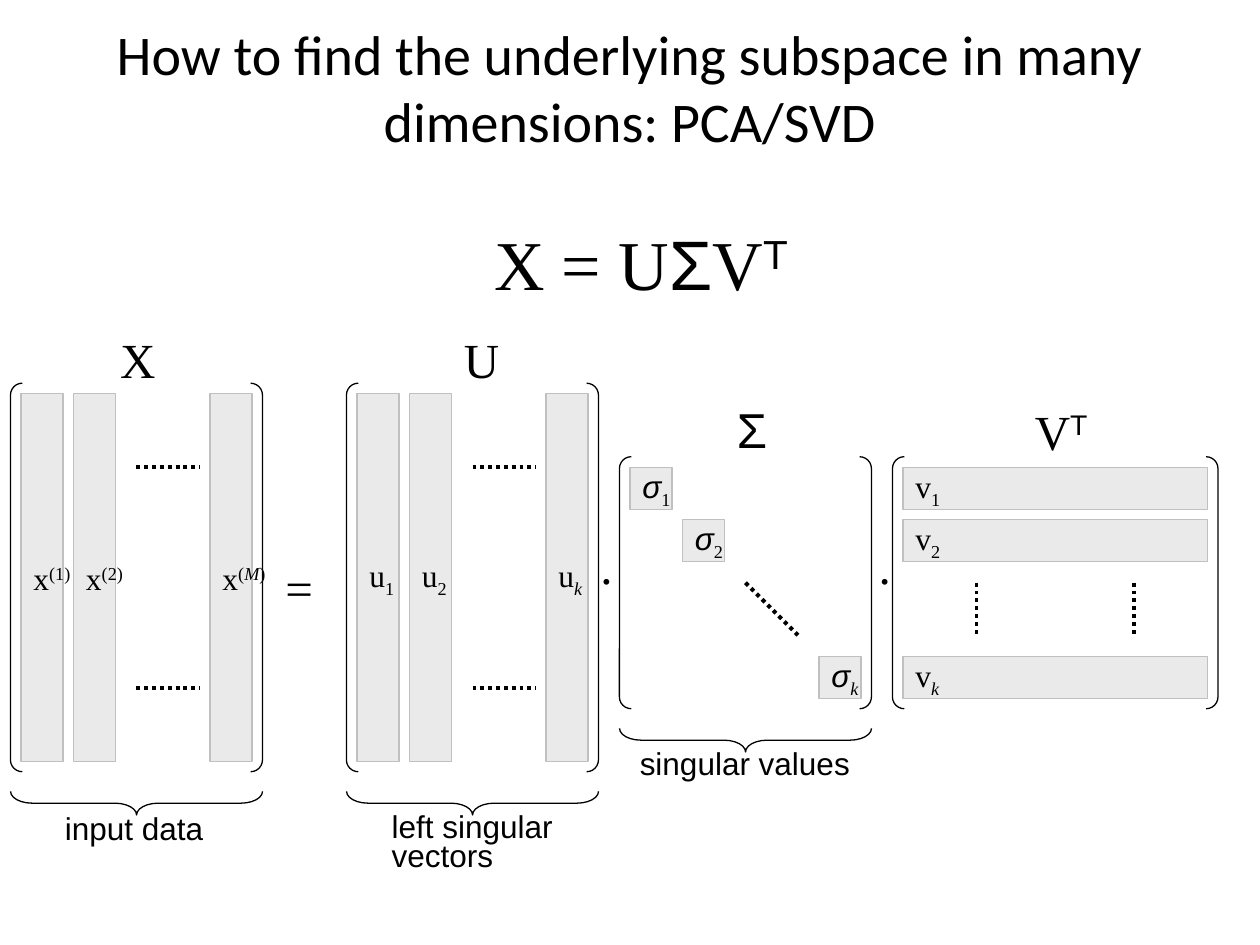
import pptx
import pptx.dml.color
import pptx.enum.dml
import pptx.enum.shapes
import pptx.enum.text
import pptx.oxml.ns
import pptx.util
from lxml import etree

PX = 9525  # EMU per px, 96 px to the inch
SHAPE = pptx.enum.shapes.MSO_SHAPE
ANCHOR = pptx.enum.text.MSO_ANCHOR
ALIGN = pptx.enum.text.PP_ALIGN
AUTO_SIZE = pptx.enum.text.MSO_AUTO_SIZE
SERIF, SANS = "Times New Roman", "Arial"
BLACK, FILL, EDGE = "000000", "EAEAEA", "C0C0C0"
SUB, SUPER = -25000, 30000


def write(shape, lines, size, frame_format, paragraph_format):
    """Fill a shape with lines of (text, font, baseline, italic) runs."""
    frame = shape.text_frame
    for name, value in frame_format.items():
        setattr(frame, name, value)
    for index, runs in enumerate(lines):
        paragraph = frame.add_paragraph() if index else frame.paragraphs[0]
        for name, value in paragraph_format.items():
            setattr(paragraph, name, value)
        for text, font, baseline, italic in runs:
            run = paragraph.add_run()
            run.text = text
            run_format = {"name": font, "size": pptx.util.Pt(size), "italic": italic}
            for name, value in run_format.items():
                setattr(run.font, name, value)
            run.font.color.rgb = pptx.dml.color.RGBColor.from_string(BLACK)
            if baseline:
                run._r.get_or_add_rPr().set("baseline", str(baseline))


def add_outlined(preset, box, line_colour, fill_colour=None):
    shape = slide.shapes.add_shape(preset, *(value * PX for value in box))
    shape.shadow.inherit = False
    shape.line.width = pptx.util.Pt(0.75)
    shape.line.color.rgb = pptx.dml.color.RGBColor.from_string(line_colour)
    if fill_colour:
        shape.fill.solid()
        shape.fill.fore_color.rgb = pptx.dml.color.RGBColor.from_string(fill_colour)
    else:
        shape.fill.background()
    return shape


presentation = pptx.Presentation()
presentation.slide_width = 960 * PX
presentation.slide_height = 720 * PX
slide = presentation.slides.add_slide(presentation.slide_layouts[6])

title = slide.shapes.add_textbox(48 * PX, 6 * PX, 864 * PX, 120 * PX)
title_runs = [("How to find the underlying subspace in many dimensions: PCA/SVD",
               "Calibri", 0, False)]
write(title, [title_runs], 32,
      {"word_wrap": True, "vertical_anchor": ANCHOR.MIDDLE},
      {"alignment": ALIGN.CENTER})

# Brackets of X, U, Σ and V transposed
x_box, u_box = (8, 292, 192, 296), (264, 292, 192, 296)
sigma_box, v_box = (472, 348, 192, 192), (680, 348, 248, 192)
for box in (x_box, u_box, sigma_box, v_box):
    bracket = add_outlined(SHAPE.DOUBLE_BRACKET, box, BLACK)
    bracket.adjustments[0] = 0.047

# First, second and last cell of each matrix, offset from its bracket
STEPS = (8, 48, 152)
CELL = 32
superscripts = ([("(1)", SERIF, SUPER, False)],
                [("(2)", SERIF, SUPER, False)],
                [("(", SERIF, SUPER, False), ("M", SERIF, SUPER, True),
                 (")", SERIF, SUPER, False)])
subscripts = ([("1", SERIF, SUB, False)],
              [("2", SERIF, SUB, False)],
              [("k", SERIF, SUB, True)])
matrices = (
    (x_box, ("x", SERIF, 0, False), superscripts, True, False),
    (u_box, ("u", SERIF, 0, False), subscripts, True, False),
    (sigma_box, ("σ", SANS, 0, True), subscripts, True, True),
    (v_box, ("v", SERIF, 0, False), subscripts, False, True),
)
for (left, top, width, height), symbol, indices, moves_right, moves_down in matrices:
    for step, index_runs in zip(STEPS, indices):
        cell_box = (left + (step if moves_right else 8),
                    top + (step if moves_down else 8),
                    CELL if moves_right else width - 16,
                    CELL if moves_down else height - 16)
        cell = add_outlined(SHAPE.RECTANGLE, cell_box, EDGE, FILL)
        write(cell, [[symbol] + index_runs], 18,
              {"word_wrap": False, "vertical_anchor": ANCHOR.MIDDLE},
              {"alignment": ALIGN.LEFT})

# Dotted lines standing for the cells left out
dotted_lines = [(left + 96, y, left + 144, y)
                for left in (x_box[0], u_box[0]) for y in (356, 524)]
dotted_lines += [(x, 444, x, 484) for x in (744, 864)]
dotted_lines.append((568, 444, 608, 484))
for ends in dotted_lines:
    dots = slide.shapes.add_connector(pptx.enum.shapes.MSO_CONNECTOR.STRAIGHT,
                                      *(value * PX for value in ends))
    dots.line.width = pptx.util.Pt(2.25)
    dots.line.color.rgb = pptx.dml.color.RGBColor.from_string(BLACK)
    dots.line.dash_style = pptx.enum.dml.MSO_LINE.ROUND_DOT
    etree.SubElement(dots._element.spPr, pptx.oxml.ns.qn("a:effectLst"))

# Braces under X, U and Σ, turned a quarter about their centres
BRACE_DEPTH, BRACE_LENGTH = 18, 192
for centre_x, centre_y in ((104, 612), (360, 612), (568, 564)):
    brace_box = (centre_x - BRACE_DEPTH // 2, centre_y - BRACE_LENGTH // 2,
                 BRACE_DEPTH, BRACE_LENGTH)
    brace = add_outlined(SHAPE.RIGHT_BRACE, brace_box, BLACK)
    brace.rotation = 90
    brace.adjustments[0] = 0.914

# Formula, matrix names, operators and captions
transpose = ("T", SANS, SUPER, False)
labels = (
    ((367, 163, 245, 74), 40, 1, [[("X = U", SERIF, 0, False), ("Σ", SANS, 0, False),
                                   ("V", SERIF, 0, False), transpose]]),
    ((82, 246, 46, 55), 28, 1, [[("X", SERIF, 0, False)]]),
    ((344, 246, 46, 55), 28, 1, [[("U", SERIF, 0, False)]]),
    ((552, 300, 41, 55), 28, 1, [[("Σ", SANS, 0, False)]]),
    ((779, 301, 61, 55), 28, 1, [[("V", SERIF, 0, False), transpose]]),
    ((208, 420, 40, 55), 28, 1, [[("=", SERIF, 0, False)]]),
    ((448, 403, 29, 55), 28, 1, [[(".", SERIF, 0, False)]]),
    ((660, 403, 29, 55), 28, 1, [[(".", SERIF, 0, False)]]),
    ((40, 612, 125, 38), 18, 1, [[("input data", SANS, 0, False)]]),
    ((289, 617, 149, 53), 18, 0.75, [[("left singular", SANS, 0, False)],
                                     [("vectors", SANS, 0, False)]]),
    ((478, 569, 180, 32), 18, 0.75, [[("singular values", SANS, 0, False)]]),
)
for box, size, line_spacing, lines in labels:
    label = slide.shapes.add_textbox(*(value * PX for value in box))
    write(label, lines, size,
          {"word_wrap": False, "auto_size": AUTO_SIZE.SHAPE_TO_FIT_TEXT},
          {"line_spacing": line_spacing})

presentation.save("out.pptx")
